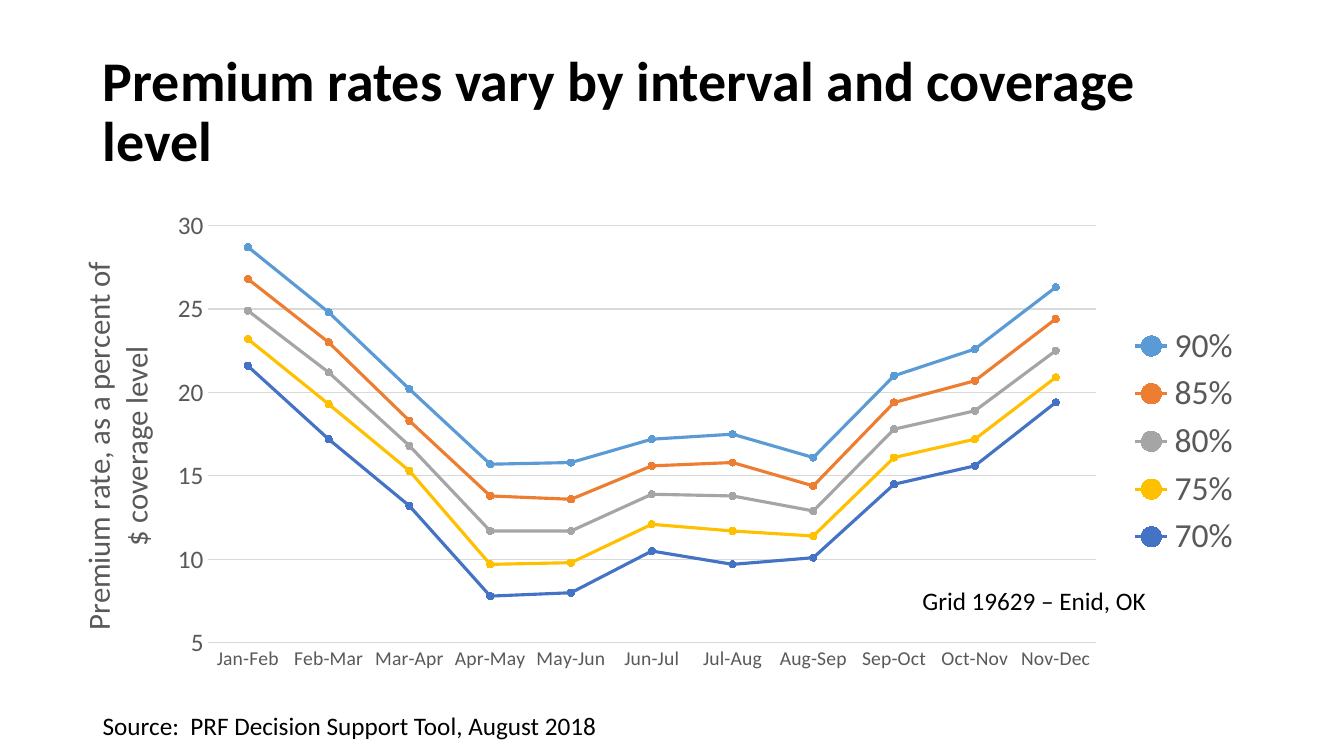
from lxml import etree
from pptx import Presentation
from pptx.chart.data import CategoryChartData
from pptx.dml.color import RGBColor
from pptx.enum.chart import (XL_CHART_TYPE, XL_LEGEND_POSITION, XL_MARKER_STYLE,
                             XL_TICK_MARK)
from pptx.enum.text import MSO_ANCHOR, PP_ALIGN
from pptx.oxml.ns import qn
from pptx.util import Inches, Pt

LINE_MARKERS = XL_CHART_TYPE.LINE_MARKERS
LEGEND_RIGHT = XL_LEGEND_POSITION.RIGHT
CIRCLE = XL_MARKER_STYLE.CIRCLE
NO_TICK = XL_TICK_MARK.NONE
MIDDLE = MSO_ANCHOR.MIDDLE
LEFT, CENTER = PP_ALIGN.LEFT, PP_ALIGN.CENTER

TITLE_ONLY = 5
FONT = "Calibri"
BLACK, GRAY, GRID = "000000", "595959", "D9D9D9"

INTERVALS = ["Jan-Feb", "Feb-Mar", "Mar-Apr", "Apr-May", "May-Jun", "Jun-Jul",
             "Jul-Aug", "Aug-Sep", "Sep-Oct", "Oct-Nov", "Nov-Dec"]
# Coverage level: line colour, premium rate per interval
COVERAGE = {
    "90%": ("5B9BD5", [28.7, 24.8, 20.2, 15.7, 15.8, 17.2, 17.5, 16.1, 21, 22.6, 26.3]),
    "85%": ("ED7D31", [26.8, 23, 18.3, 13.8, 13.6, 15.6, 15.8, 14.4, 19.4, 20.7, 24.4]),
    "80%": ("A5A5A5", [24.9, 21.2, 16.8, 11.7, 11.7, 13.9, 13.8, 12.9, 17.8, 18.9, 22.5]),
    "75%": ("FFC000", [23.2, 19.3, 15.3, 9.7, 9.8, 12.1, 11.7, 11.4, 16.1, 17.2, 20.9]),
    "70%": ("4472C4", [21.6, 17.2, 13.2, 7.8, 8, 10.5, 9.7, 10.1, 14.5, 15.6, 19.4]),
}


def rgb(value):
    return RGBColor.from_string(value)


def style_font(font, size, color, bold=False):
    font.name = FONT
    font.size = Pt(size)
    font.bold = bold
    font.color.rgb = rgb(color)


def set_layout(parent, index, **values):
    """Place a chart part by fractions of the chart's size."""
    for old in parent.findall(qn("c:layout")):
        parent.remove(old)
    layout = etree.Element(qn("c:layout"))
    parent.insert(index, layout)
    manual = etree.SubElement(layout, qn("c:manualLayout"))
    for tag, value in values.items():
        etree.SubElement(manual, qn(f"c:{tag}")).set("val", str(value))


def add_title(slide, text):
    title = slide.shapes.title
    title.left, title.top = Inches(0.92), Inches(0.4)
    title.width, title.height = Inches(11.5), Inches(1.45)
    frame = title.text_frame
    frame.text = text
    frame.word_wrap = True
    frame.vertical_anchor = MIDDLE
    heading = frame.paragraphs[0]
    heading.alignment = LEFT
    heading.line_spacing = 0.9
    style_font(heading.runs[0].font, 40, BLACK, bold=True)


def add_note(slide, text, left, top, width):
    note = slide.shapes.add_textbox(Inches(left), Inches(top), Inches(width), Inches(0.4))
    frame = note.text_frame
    frame.text = text
    frame.word_wrap = False
    style_font(frame.paragraphs[0].runs[0].font, 18, BLACK)


def format_axes(chart):
    intervals, rates = chart.category_axis, chart.value_axis
    for axis, size in ((intervals, 14), (rates, 18)):
        axis.major_tick_mark = axis.minor_tick_mark = NO_TICK
        style_font(axis.tick_labels.font, size, GRAY)
    rates.minimum_scale, rates.maximum_scale, rates.major_unit = 5, 30, 5
    rates.format.line.fill.background()
    rates.has_major_gridlines = True
    for line in (intervals.format.line, rates.major_gridlines.format.line):
        line.color.rgb = rgb(GRID)
        line.width = Pt(0.75)

    # Rotated value axis title
    rate_title = rates.axis_title
    rate_title.text_frame.text = "Premium rate, as a percent of\n$ coverage level"
    for paragraph in rate_title.text_frame.paragraphs:
        paragraph.alignment = CENTER
        style_font(paragraph.runs[0].font, 22, GRAY)
    body = rate_title.element.find(".//" + qn("a:bodyPr"))
    body.set("rot", "-5400000")
    body.set("vert", "horz")
    set_layout(rate_title.element, 1, xMode="edge", yMode="edge", x=0.02, y=0.12)


def add_rate_chart(slide):
    rates = CategoryChartData()
    rates.categories = INTERVALS
    for level, (_, values) in COVERAGE.items():
        rates.add_series(level, values)
    chart = slide.shapes.add_chart(LINE_MARKERS, Inches(0.51), Inches(2),
                                   Inches(11.91), Inches(4.76), rates).chart
    style_font(chart.font, 10, BLACK)
    chart.has_title = False
    chart.has_legend = True
    chart.legend.position = LEGEND_RIGHT
    chart.legend.include_in_layout = False
    style_font(chart.legend.font, 24, GRAY)
    format_axes(chart)
    set_layout(chart.element.find(".//" + qn("c:plotArea")), 0, layoutTarget="inner",
               xMode="edge", yMode="edge", x=0.13, y=0.05, w=0.74, h=0.87)

    # Coverage level lines
    plot = chart.plots[0]
    plot.vary_by_categories = False
    for series, (color, _) in zip(plot.series, COVERAGE.values()):
        series.smooth = False
        series.format.line.color.rgb = rgb(color)
        series.format.line.width = Pt(2.25)
        marker = series.marker
        marker.style, marker.size = CIRCLE, 5
        marker.format.fill.solid()
        marker.format.fill.fore_color.rgb = rgb(color)
        marker.format.line.color.rgb = rgb(color)


def main():
    deck = Presentation()
    deck.slide_width, deck.slide_height = Inches(13.33), Inches(7.5)
    slide = deck.slides.add_slide(deck.slide_layouts[TITLE_ONLY])
    add_title(slide, "Premium rates vary by interval and coverage level")
    add_rate_chart(slide)
    add_note(slide, "Source:  PRF Decision Support Tool, August 2018", 0.92, 7, 5.16)
    add_note(slide, "Grid 19629 – Enid, OK", 9.05, 5.76, 2.45)
    deck.save("out.pptx")


if __name__ == "__main__":
    main()
